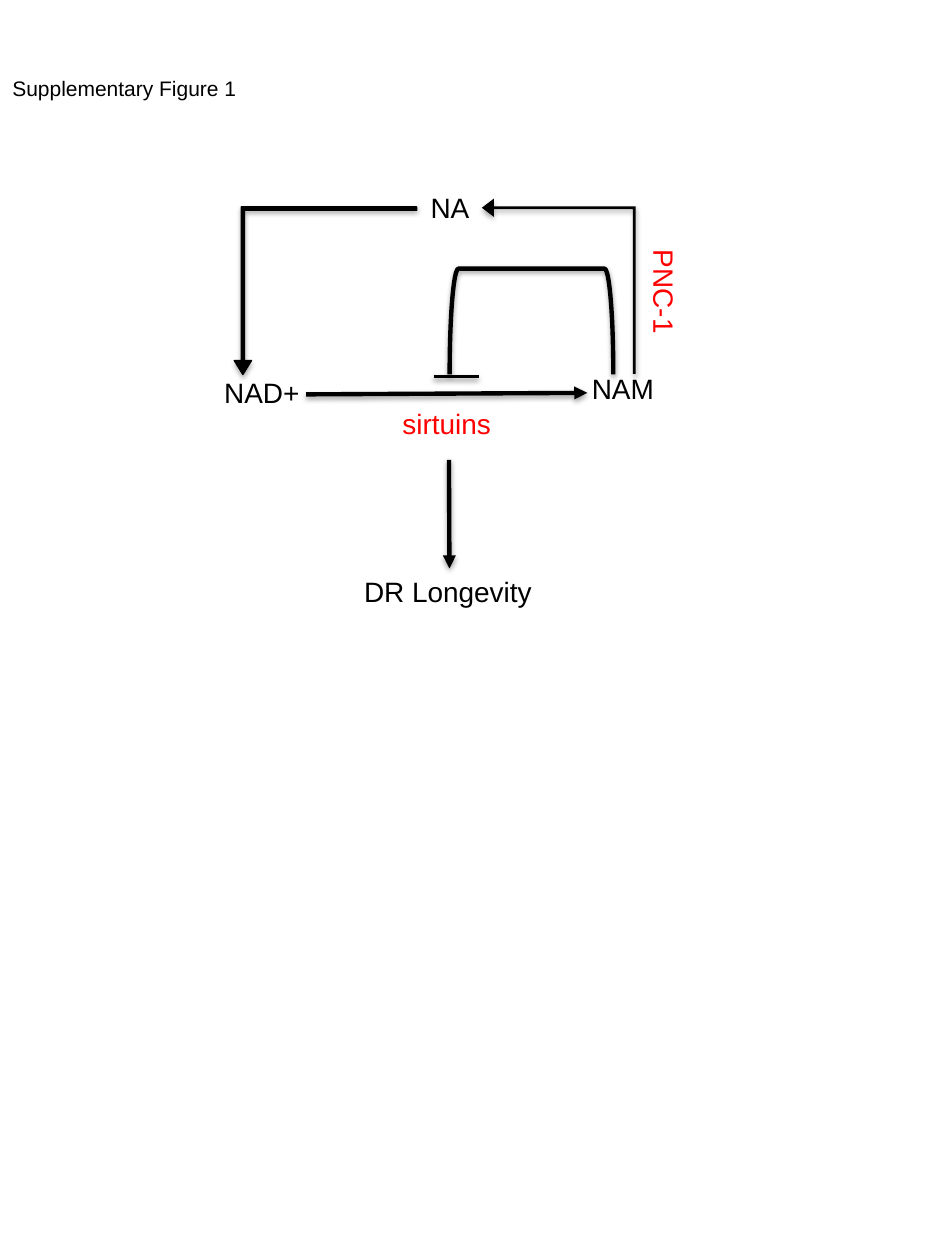
from lxml import etree
from pptx import Presentation
from pptx.dml.color import RGBColor
from pptx.enum.shapes import MSO_CONNECTOR, MSO_SHAPE
from pptx.enum.text import MSO_AUTO_SIZE, PP_ALIGN
from pptx.oxml.ns import qn
from pptx.util import Cm, Pt

BLACK = RGBColor(0, 0, 0)
RED = RGBColor(255, 0, 0)
LINE = MSO_CONNECTOR.STRAIGHT
BENT = MSO_SHAPE.BENT_UP_ARROW
BRACKET = MSO_SHAPE.RIGHT_BRACKET
FIT = MSO_AUTO_SIZE.SHAPE_TO_FIT_TEXT
LEFT, CENTER = PP_ALIGN.LEFT, PP_ALIGN.CENTER
FONT = {"name": "Arial", "size": Pt(16)}


def shade(part, alpha=38, dist=1.6):
    """Soft shadow that falls straight down."""
    fx = etree.SubElement(part._element.spPr, qn("a:effectLst"))
    drop = etree.SubElement(fx, qn("a:outerShdw"), blurRad=str(Pt(3.1)),
                            dist=str(Pt(dist)), dir="5400000", rotWithShape="0")
    tint = etree.SubElement(drop, qn("a:srgbClr"), val=str(BLACK))
    etree.SubElement(tint, qn("a:alpha"), val=str(alpha * 1000))


def label(slide, text, x, y, w, h=0.94, color=BLACK, turn=0, wrap=False,
          align=LEFT, size=16):
    box = slide.shapes.add_textbox(Cm(x), Cm(y), Cm(w), Cm(h))
    box.rotation = turn
    frame = box.text_frame
    frame.word_wrap, frame.auto_size = wrap, FIT
    para = frame.paragraphs[0]
    para.alignment = align
    run = para.add_run()
    run.text = text
    for key, val in {**FONT, "size": Pt(size)}.items():
        setattr(run.font, key, val)
    run.font.color.rgb = color
    return box


def stroke(slide, x1, y1, x2, y2, width=2.5, head=True):
    line = slide.shapes.add_connector(LINE, Cm(x1), Cm(y1), Cm(x2), Cm(y2))
    line.line.color.rgb = BLACK
    line.line.width = Pt(width)
    if head:
        etree.SubElement(line.line._get_or_add_ln(), qn("a:tailEnd"),
                         type="triangle")
    shade(line)
    return line


def bend(slide, kind, x, y, w, h, turn, adj=(), width=None):
    part = slide.shapes.add_shape(kind, Cm(x), Cm(y), Cm(w), Cm(h))
    part.rotation = turn
    for i, val in enumerate(adj):
        part.adjustments[i] = val
    if kind == BENT:
        part.fill.solid()
        part.fill.fore_color.rgb = BLACK
    else:
        part.fill.background()
    if width:
        part.line.color.rgb = BLACK
        part.line.width = Pt(width)
    else:
        part.line.fill.background()
    if kind == BENT:
        shade(part, 35, 1.8)
    else:
        shade(part)


def cycle(slide, x, y):
    """NAD+ cycle, placed from its top left corner in cm."""
    # Metabolites
    label(slide, "NAD+", x, y + 3.73, 2.95, wrap=True)
    label(slide, "NAM", x + 7.41, y + 3.66, 1.78)
    label(slide, "NA", x + 4.16, y, 1.3)

    # Feedback from NAM, ending in a bar
    bend(slide, BRACKET, x + 5.38, y + 1.12, 2.13, 3.3, 270, width=2.5)
    stroke(slide, x + 4.47, y + 3.88, x + 5.38, y + 3.88, 2, head=False)

    # NAD+ to NAM, NAM to NA, NA to NAD+
    stroke(slide, x + 1.9, y + 4.24, x + 7.57, y + 4.21)
    bend(slide, BENT, x + 5.23, y + 0.51, 3.53, 3.1, 270,
         (0.018, 0.059, 0.078))
    bend(slide, BENT, x + 0.45, y + 0.46, 3.68, 3.38, 180,
         (0.02, 0.052, 0.084), 0.75)

    # Enzymes
    label(slide, "PNC-1", x + 8, y + 1.73, 2.24, color=RED, turn=90)
    label(slide, "sirtuins", x + 3.58, y + 4.37, 2.31, color=RED,
          align=CENTER)

    # Outcome
    goal = label(slide, "DR Longevity", x + 2.82, y + 7.75, 3.94)
    down = stroke(slide, x + 4.78, y + 5.56, x + 4.78, y + 7.75)
    down.end_connect(goal, 0)


def main():
    deck = Presentation()
    deck.slide_width, deck.slide_height = Cm(19.05), Cm(25.4)
    slide = deck.slides.add_slide(deck.slide_layouts[6])
    cycle(slide, 4.27, 3.71)
    label(slide, "Supplementary Figure 1", 0, 1.4, 5.08, 0.76, size=12)
    deck.save("out.pptx")


if __name__ == "__main__":
    main()
